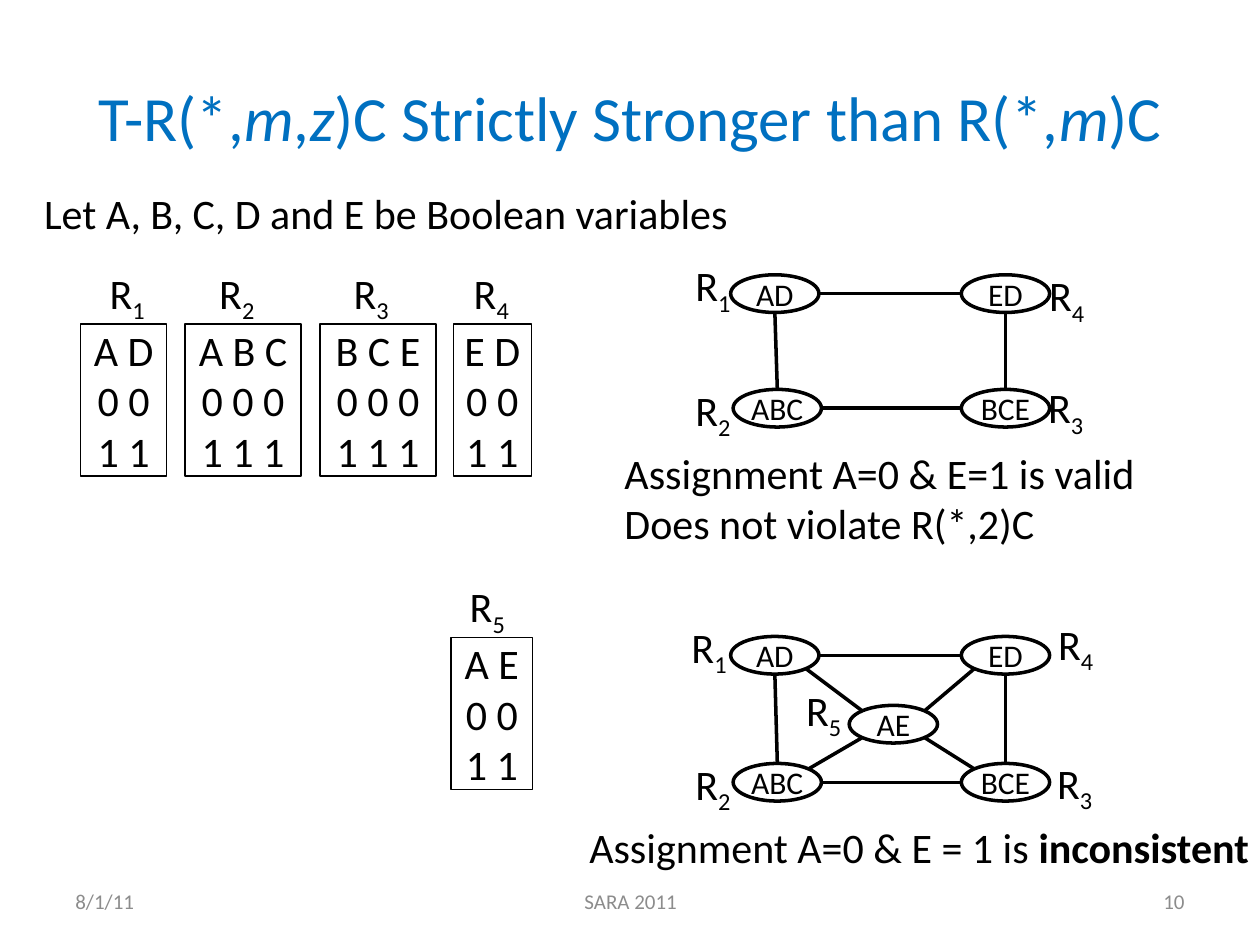
from lxml.etree import SubElement
from pptx import Presentation
from pptx.dml.color import RGBColor
from pptx.enum.shapes import MSO_CONNECTOR, MSO_SHAPE
from pptx.enum.text import MSO_ANCHOR, PP_ALIGN
from pptx.oxml.ns import qn
from pptx.util import Cm, Pt

BLUE = RGBColor(0x00, 0x70, 0xC0)
BLACK = RGBColor(0x00, 0x00, 0x00)
WHITE = RGBColor(0xFF, 0xFF, 0xFF)
GRAY = RGBColor(0x8C, 0x8C, 0x8C)
FONT = "Calibri"

NODE_WIDTH, NODE_HEIGHT = 1.78, 0.76
LABEL_WIDTH, LABEL_HEIGHT = 1.32, 1.27
TUPLES_HEIGHT = 3.07


def write(target, lines, size=24, color=BLACK, align=PP_ALIGN.LEFT):
    """Fill a shape with one paragraph per line, in a single format."""
    frame = target.text_frame
    frame.word_wrap = True
    frame.text = "\n".join(lines)
    for paragraph in frame.paragraphs:
        paragraph.alignment = align
        for run in paragraph.runs:
            run.font.name = FONT
            run.font.size = Pt(size)
            run.font.color.rgb = color
    return frame


def add_relation_label(left, top, number):
    """Place an R with its number as a subscript."""
    label = slide.shapes.add_textbox(
        Cm(left), Cm(top), Cm(LABEL_WIDTH), Cm(LABEL_HEIGHT))
    paragraph = write(label, ["R"]).paragraphs[0]
    subscript = paragraph.add_run()
    subscript.text = str(number)
    subscript.font.name = FONT
    subscript.font.size = Pt(24)
    subscript.font.color.rgb = BLACK
    subscript.font._element.set("baseline", "-25000")


prs = Presentation()
prs.slide_width, prs.slide_height = Cm(25.4), Cm(19.05)
slide = prs.slides.add_slide(prs.slide_layouts[5])

# Title, with the parameters m and z in italics
title = slide.shapes.title
title.left, title.top, title.width, title.height = Cm(1.27), Cm(0.76), Cm(22.86), Cm(3.18)
title.text_frame.vertical_anchor = MSO_ANCHOR.MIDDLE
heading = title.text_frame.paragraphs[0]
heading.alignment = PP_ALIGN.CENTER
for part in ["T-R(*,", "m", ",", "z", ")C Strictly Stronger than R(*,", "m", ")C"]:
    run = heading.add_run()
    run.text = part
    run.font.name = FONT
    run.font.size = Pt(36)
    run.font.italic = part in ("m", "z")
    run.font.color.rgb = BLUE

# Constraint graphs: nodes by left and top, relation labels by left, top, number
graphs = [
    {
        "nodes": {"AD": (14.73, 5.54), "ED": (19.38, 5.54),
                  "ABC": (14.78, 7.85), "BCE": (19.38, 7.85)},
        "labels": [(13.77, 5.11, 1), (13.77, 7.62, 2), (20.88, 7.57, 3), (20.9, 5.31, 4)],
    },
    {
        "nodes": {"AD": (14.73, 12.83), "ED": (19.38, 12.83),
                  "ABC": (14.78, 15.39), "BCE": (19.38, 15.39), "AE": (17.12, 14.22)},
        "labels": [(13.69, 12.4, 1), (13.77, 15.16, 2), (21.06, 15.14, 3),
                   (21.08, 12.34, 4), (16, 13.67, 5)],
    },
]

# Points on an ellipse, as fractions of its width and height
NEAR, FAR = 0.15, 0.85
SITES = {"top": (0.5, 0), "left": (0, 0.5), "bottom": (0.5, 1), "right": (1, 0.5),
         "top left": (NEAR, NEAR), "top right": (FAR, NEAR),
         "bottom left": (NEAR, FAR), "bottom right": (FAR, FAR)}
edges = [
    ("AD", "right", "ED", "left"),
    ("AD", "bottom", "ABC", "top"),
    ("ABC", "right", "BCE", "left"),
    ("ED", "bottom", "BCE", "top"),
    ("AD", "bottom right", "AE", "top left"),
    ("ABC", "top right", "AE", "bottom left"),
    ("AE", "top right", "ED", "bottom left"),
    ("BCE", "top left", "AE", "bottom right"),
]

for graph in graphs:
    nodes = graph["nodes"]
    for scope, (left, top) in nodes.items():
        node = slide.shapes.add_shape(
            MSO_SHAPE.OVAL, Cm(left), Cm(top), Cm(NODE_WIDTH), Cm(NODE_HEIGHT))
        node.shadow.inherit = False
        node.fill.solid()
        node.fill.fore_color.rgb = WHITE
        fill_color = node._element.spPr.find(qn("a:solidFill"))[0]
        SubElement(fill_color, qn("a:alpha")).set("val", "48000")
        node.line.color.rgb = BLACK
        node.line.width = Pt(2)
        frame = write(node, [scope], 18, align=PP_ALIGN.CENTER)
        frame.word_wrap = False
        frame.vertical_anchor = MSO_ANCHOR.MIDDLE
        frame.margin_left = frame.margin_right = frame.margin_top = frame.margin_bottom = 0

    for start, start_site, end, end_site in edges:
        if start not in nodes or end not in nodes:
            continue
        ends = []
        for scope, site in ((start, start_site), (end, end_site)):
            (left, top), (across, down) = nodes[scope], SITES[site]
            ends += [Cm(left + across * NODE_WIDTH), Cm(top + down * NODE_HEIGHT)]
        edge = slide.shapes.add_connector(MSO_CONNECTOR.STRAIGHT, *ends)
        edge.line.color.rgb = BLACK
        edge.line.width = Pt(2)
        SubElement(edge._element.spPr, qn("a:effectLst"))

    for label in graph["labels"]:
        add_relation_label(*label)

# Relations: number, left, top, width, label left, tuples
relations = [
    (1, 1.63, 6.53, 1.73, 1.96, ["A D", "0 0", "1 1"]),
    (2, 3.73, 6.53, 2.34, 4.17, ["A B C", "0 0 0", "1 1 1"]),
    (3, 6.45, 6.53, 2.34, 6.88, ["B C E", "0 0 0", "1 1 1"]),
    (4, 9.14, 6.53, 1.57, 9.3, ["E D", "0 0", "1 1"]),
    (5, 9.09, 12.85, 1.65, 9.22, ["A E", "0 0", "1 1"]),
]
for number, left, top, width, label_left, tuples in relations:
    relation = slide.shapes.add_shape(
        MSO_SHAPE.RECTANGLE, Cm(left), Cm(top), Cm(width), Cm(TUPLES_HEIGHT))
    relation.shadow.inherit = False
    relation.fill.background()
    relation.line.color.rgb = BLACK
    relation.line.width = Pt(0.75)
    frame = write(relation, tuples, align=PP_ALIGN.CENTER)
    frame.word_wrap = False
    frame.vertical_anchor = MSO_ANCHOR.MIDDLE
    frame.margin_left = frame.margin_right = frame.margin_top = frame.margin_bottom = 0
    add_relation_label(label_left, top - LABEL_HEIGHT, number)

# Statements
statements = [
    (0.64, 3.66, 15.52, 1.27, ["Let A, B, C, D and E be Boolean variables"]),
    (12.34, 8.89, 12.07, 2.31, ["Assignment A=0 & E=1 is valid", "Does not violate R(*,2)C"]),
    (11.63, 16.43, 13.82, 1.27, ["Assignment A=0 & E = 1 is "]),
]
for left, top, width, height, lines in statements:
    statement = slide.shapes.add_textbox(Cm(left), Cm(top), Cm(width), Cm(height))
    frame = write(statement, lines)
frame.word_wrap = False
verdict = frame.paragraphs[0].add_run()
verdict.text = "inconsistent"
verdict.font.name = FONT
verdict.font.size = Pt(24)
verdict.font.bold = True
verdict.font.color.rgb = BLACK

# Footer
footer = [
    (1.27, 5.92, "8/1/11", PP_ALIGN.LEFT),
    (8.69, 8.05, "SARA 2011", PP_ALIGN.CENTER),
    (18.21, 5.92, "10", PP_ALIGN.RIGHT),
]
for left, width, text, align in footer:
    note = slide.shapes.add_textbox(Cm(left), Cm(17.65), Cm(width), Cm(1.02))
    write(note, [text], 12, GRAY, align).vertical_anchor = MSO_ANCHOR.MIDDLE

prs.save("out.pptx")
